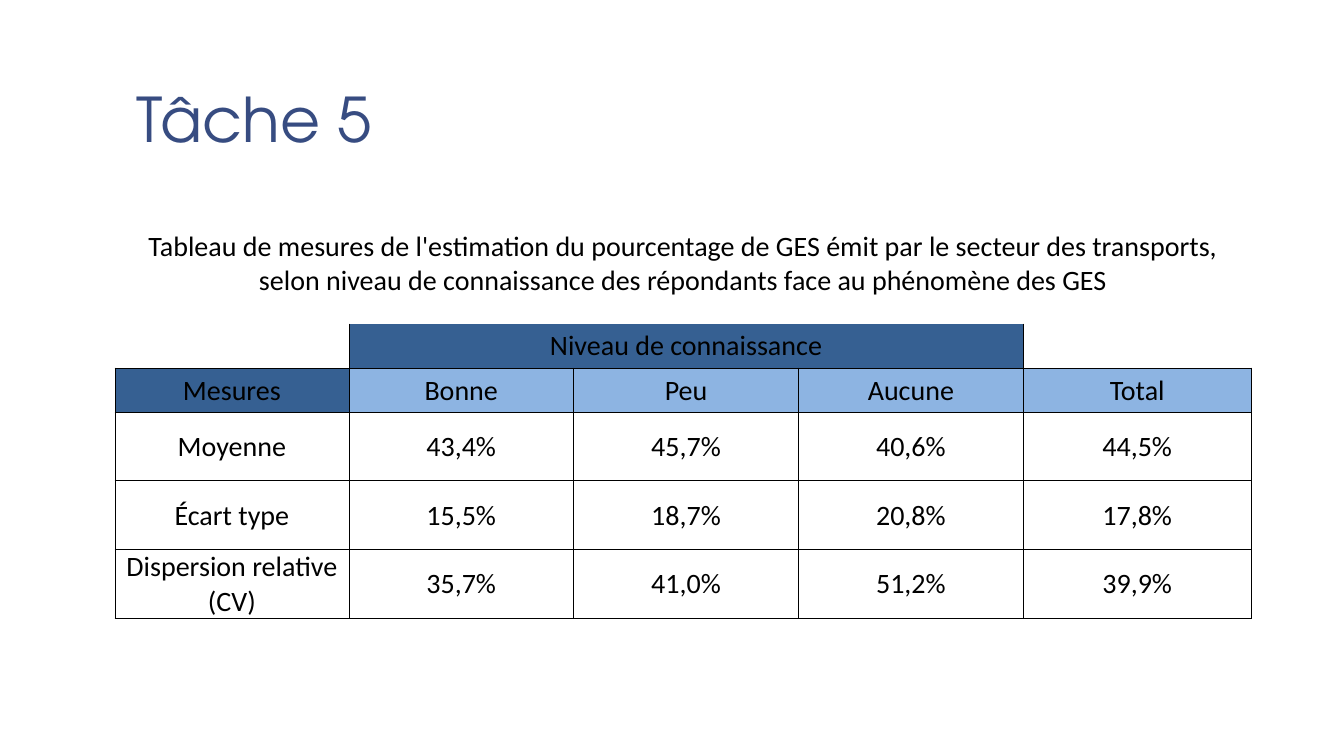
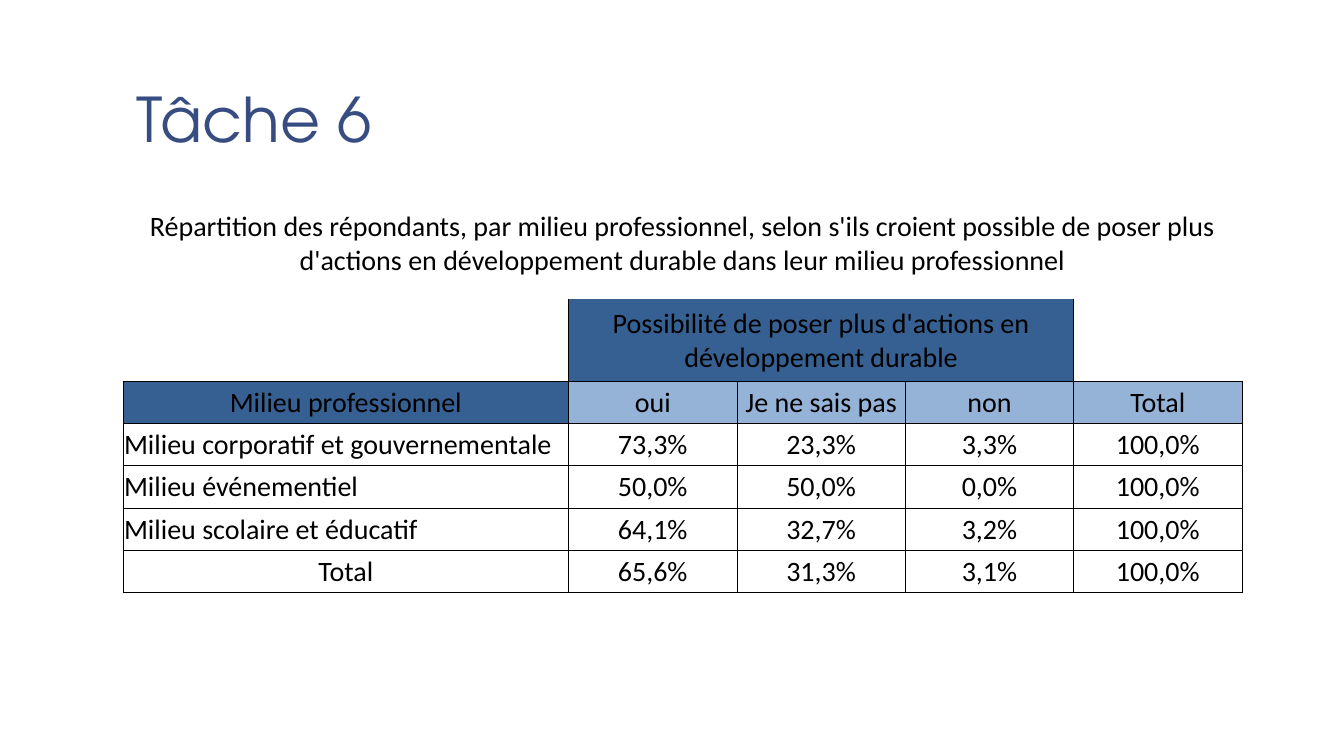
from dataclasses import dataclass

import lxml.etree
import pptx
import pptx.dml.color
import pptx.enum.text
import pptx.oxml.ns
import pptx.util

Inches = pptx.util.Inches
Pt = pptx.util.Pt
CENTER = pptx.enum.text.PP_ALIGN.CENTER
LEFT = pptx.enum.text.PP_ALIGN.LEFT
ANCHOR = pptx.enum.text.MSO_ANCHOR


@dataclass(frozen=True)
class Theme:
    title_color: str = "374C81"
    text_color: str = "000000"
    border_color: str = "000000"
    band_fill: str = "366092"
    body_fill: str = "FFFFFF"
    title_font: str = "TeX Gyre Adventor"
    table_font: str = "Calibri"
    title_size: int = 44
    table_size: int = 20
    border_width: float = 0.5


def rgb(color):
    return pptx.dml.color.RGBColor.from_string(color)


class Deck:
    def __init__(self, theme):
        self.theme = theme
        self.presentation = pptx.Presentation()
        self.presentation.slide_width = Inches(13.33)
        self.presentation.slide_height = Inches(7.5)
        self.slide = None

    def new_slide(self, title):
        self.slide = self.presentation.slides.add_slide(self.presentation.slide_layouts[6])
        self.title(title)

    def style(self, paragraph, font_name, size, color):
        paragraph.font.name = font_name
        paragraph.font.size = Pt(size)
        paragraph.font.color.rgb = rgb(color)

    def title(self, text):
        theme = self.theme
        box = self.slide.shapes.add_textbox(Inches(1.22), Inches(0.08), Inches(11.11), Inches(1.53))
        frame = box.text_frame
        frame.word_wrap = True
        frame.vertical_anchor = ANCHOR.BOTTOM
        frame.margin_left = frame.margin_right = Inches(0.13)
        frame.margin_top = frame.margin_bottom = Inches(0.07)
        paragraph = frame.paragraphs[0]
        paragraph.text = text
        paragraph.line_spacing = 0.85
        self.style(paragraph, theme.title_font, theme.title_size, theme.title_color)

    def borders(self, cell, sides):
        properties = cell._tc.get_or_add_tcPr()
        qn = pptx.oxml.ns.qn
        for position, side in enumerate("LRTB"):
            line = lxml.etree.Element(qn(f"a:ln{side}"), w=str(Pt(self.theme.border_width)))
            if side in sides:
                fill = lxml.etree.SubElement(line, qn("a:solidFill"))
                lxml.etree.SubElement(fill, qn("a:srgbClr"), val=self.theme.border_color)
            else:
                lxml.etree.SubElement(line, qn("a:noFill"))
            properties.insert(position, line)

    def cell(self, cell, text, fill, sides, alignment=CENTER):
        theme = self.theme
        cell.margin_left = cell.margin_right = cell.margin_top = Inches(0.01)
        cell.margin_bottom = 0
        cell.vertical_anchor = ANCHOR.MIDDLE
        if fill:
            cell.fill.solid()
            cell.fill.fore_color.rgb = rgb(fill)
        else:
            cell.fill.background()
        self.borders(cell, sides)
        paragraph = cell.text_frame.paragraphs[0]
        paragraph.text = text
        paragraph.alignment = alignment
        self.style(paragraph, theme.table_font, theme.table_size, theme.text_color)

    def table(self, left, top, widths, heights, caption, group, header, rows,
              header_fill, left_labels=()):
        theme = self.theme
        last = len(widths) - 1
        table = self.slide.shapes.add_table(
            len(heights), len(widths), Inches(left), Inches(top),
            Inches(sum(widths)), Inches(sum(heights))).table
        table.first_row = table.horz_banding = False
        for column, width in zip(table.columns, widths):
            column.width = Inches(width)
        for row, height in zip(table.rows, heights):
            row.height = Inches(height)
        table.cell(0, 0).merge(table.cell(0, last))
        table.cell(1, 1).merge(table.cell(1, last - 1))

        for column in range(last + 1):
            self.cell(table.cell(0, column), caption if column == 0 else "", None, "")
            in_group = 0 < column < last
            sides = {0: "RB", last: "LB"}.get(column, "LRB")
            self.cell(table.cell(1, column), group if column == 1 else "",
                      theme.band_fill if in_group else None, sides)
            self.cell(table.cell(2, column), header[column],
                      header_fill if column else theme.band_fill, "LRTB")

        for row, values in enumerate(rows, start=3):
            for column, text in enumerate(values):
                alignment = LEFT if text in left_labels else CENTER
                self.cell(table.cell(row, column), text, theme.body_fill, "LRTB", alignment)


def main():
    deck = Deck(Theme())

    deck.new_slide("Tâche 5")
    deck.table(
        1.14, 2.02, [2.32] + [2.23] * 3 + [2.26], [1.19] + [0.44] * 2 + [0.68] * 3,
        "Tableau de mesures de l'estimation du pourcentage de GES émit par le secteur des "
        "transports, selon niveau de connaissance des répondants face au phénomène des GES",
        "Niveau de connaissance",
        ["Mesures", "Bonne", "Peu", "Aucune", "Total"],
        [
            ["Moyenne", "43,4%", "45,7%", "40,6%", "44,5%"],
            ["Écart type", "15,5%", "18,7%", "20,8%", "17,8%"],
            ["Dispersion relative (CV)", "35,7%", "41,0%", "51,2%", "39,9%"],
        ],
        header_fill="8DB4E2")

    deck.new_slide("Tâche 6")
    sectors = [
        ["Milieu corporatif et gouvernementale", "73,3%", "23,3%", "3,3%", "100,0%"],
        ["Milieu événementiel", "50,0%", "50,0%", "0,0%", "100,0%"],
        ["Milieu scolaire et éducatif", "64,1%", "32,7%", "3,2%", "100,0%"],
    ]
    deck.table(
        1.22, 1.86, [4.42] + [1.67] * 4, [1.11, 0.81] + [0.42] * 5,
        "Répartition des répondants, par milieu professionnel, selon s'ils croient possible de "
        "poser plus d'actions en développement durable dans leur milieu professionnel",
        "Possibilité de poser plus d'actions en développement durable",
        ["Milieu professionnel", "oui", "Je ne sais pas", "non", "Total"],
        sectors + [["Total", "65,6%", "31,3%", "3,1%", "100,0%"]],
        header_fill="95B3D7",
        left_labels=[sector[0] for sector in sectors])

    deck.presentation.save("out.pptx")


if __name__ == "__main__":
    main()
